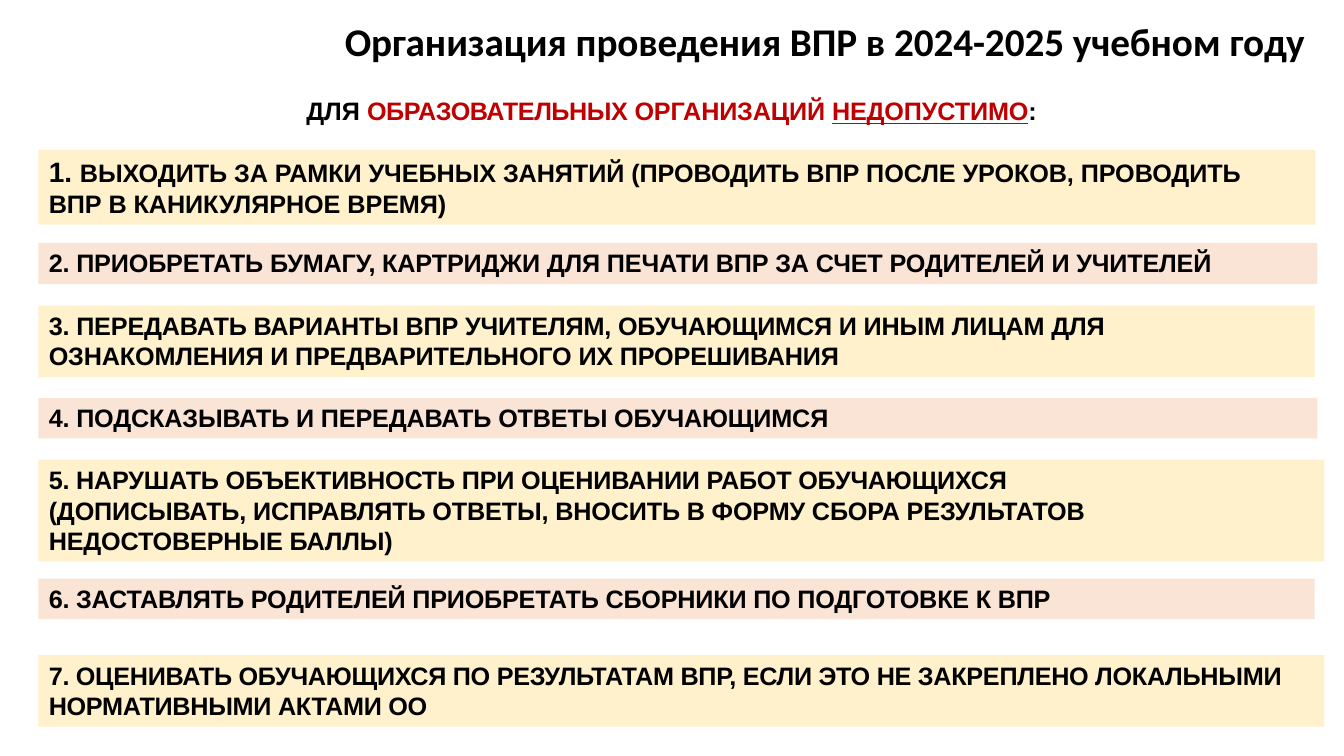
"""Build the slide listing what schools must not do during the VPR tests."""
from dataclasses import dataclass
from typing import Optional

from pptx import Presentation
from pptx.dml.color import RGBColor
from pptx.enum.shapes import MSO_SHAPE
from pptx.enum.text import MSO_ANCHOR, PP_ALIGN
from pptx.util import Cm, Pt

COLORS = {
    "black": "000000",
    "red": "C00000",
    "white": "FFFFFF",
    "cream": "FFF1CC",
    "peach": "FAE4D5",
}
BAR_LEFT = 0.97
BAR_FILLS = ("cream", "peach")


@dataclass(frozen=True)
class Span:
    text: str
    color: str = "black"
    size: float = 18
    font: str = "Arial"
    underline: bool = False
    spacing: float = -0.1


@dataclass(frozen=True)
class Line:
    spans: tuple[Span, ...]
    pitch: Optional[float] = None
    before: float = 0


@dataclass(frozen=True)
class Bar:
    top: float
    width: float
    height: float
    inset_top: float
    lines: tuple[Line, ...]
    inset_right: float = 0


def plain(text: str, pitch: Optional[float] = None, before: float = 0, spacing: float = -0.1) -> Line:
    return Line((Span(text, spacing=spacing),), pitch, before)


TITLE = Line((Span("Организация проведения ВПР в 2024-2025 учебном году",
                   size=28, font="Calibri", spacing=-0.05),))
HEADING = Line((
    Span("ДЛЯ ", spacing=0),
    Span("ОБРАЗОВАТЕЛЬНЫХ ", "red", spacing=-0.3),
    Span("ОРГАНИЗАЦИЙ ", "red"),
    Span("НЕДОПУСТИМО", "red", underline=True),
    Span(":"),
))
BARS = (
    Bar(3.78, 32.18, 1.88, 0.2, (
        Line((Span("1. ", size=20, spacing=0),
              Span("ВЫХОДИТЬ ЗА РАМКИ УЧЕБНЫХ ЗАНЯТИЙ (ПРОВОДИТЬ ВПР ПОСЛЕ УРОКОВ, "
                   "ПРОВОДИТЬ ВПР В КАНИКУЛЯРНОЕ ВРЕМЯ)", spacing=-0.05)), 21.6),), 0.8),
    Bar(6.12, 32.23, 1.04, 0.12, (
        plain("2. ПРИОБРЕТАТЬ БУМАГУ, КАРТРИДЖИ ДЛЯ ПЕЧАТИ ВПР ЗА СЧЕТ РОДИТЕЛЕЙ И УЧИТЕЛЕЙ"),)),
    Bar(7.7, 32.16, 1.8, 0.15, (
        plain("3. ПЕРЕДАВАТЬ ВАРИАНТЫ ВПР УЧИТЕЛЯМ, ОБУЧАЮЩИМСЯ И ИНЫМ ЛИЦАМ ДЛЯ "
              "ОЗНАКОМЛЕНИЯ И ПРЕДВАРИТЕЛЬНОГО ИХ ПРОРЕШИВАНИЯ", 21.1),)),
    Bar(10.03, 32.23, 1.02, 0.1, (
        plain("4. ПОДСКАЗЫВАТЬ И ПЕРЕДАВАТЬ ОТВЕТЫ ОБУЧАЮЩИМСЯ"),)),
    Bar(11.58, 32.41, 2.57, 0.12, (
        plain("5. НАРУШАТЬ ОБЪЕКТИВНОСТЬ ПРИ ОЦЕНИВАНИИ РАБОТ ОБУЧАЮЩИХСЯ", spacing=-0.15),
        plain("(ДОПИСЫВАТЬ, ИСПРАВЛЯТЬ ОТВЕТЫ, ВНОСИТЬ В ФОРМУ СБОРА РЕЗУЛЬТАТОВ "
              "НЕДОСТОВЕРНЫЕ БАЛЛЫ)", 21.1, 1.1)), 0.5),
    Bar(14.58, 32.16, 1.02, 0.12, (
        plain("6. ЗАСТАВЛЯТЬ РОДИТЕЛЕЙ ПРИОБРЕТАТЬ СБОРНИКИ ПО ПОДГОТОВКЕ К ВПР", spacing=-0.15),)),
    Bar(16.51, 32.41, 1.8, 0.15, (
        plain("7. ОЦЕНИВАТЬ ОБУЧАЮЩИХСЯ ПО РЕЗУЛЬТАТАМ ВПР, ЕСЛИ ЭТО НЕ ЗАКРЕПЛЕНО "
              "ЛОКАЛЬНЫМИ НОРМАТИВНЫМИ АКТАМИ ОО", 21.1, spacing=-0.2),)),
)


def write_text(box, lines: tuple[Line, ...], *, left: float, top: float, right: float = 0) -> None:
    frame = box.text_frame
    frame.word_wrap = True
    frame.vertical_anchor = MSO_ANCHOR.TOP
    frame.margin_left, frame.margin_top = Cm(left), Cm(top)
    frame.margin_right, frame.margin_bottom = Cm(right), Cm(0)
    for index, line in enumerate(lines):
        para = frame.add_paragraph() if index else frame.paragraphs[0]
        para.alignment = PP_ALIGN.LEFT
        if line.before:
            para.space_before = Pt(line.before)
        if line.pitch:
            para.line_spacing = Pt(line.pitch)
        for span in line.spans:
            run = para.add_run()
            run.text = span.text
            run.font.name = span.font
            run.font.size = Pt(span.size)
            run.font.bold = True
            run.font.underline = span.underline
            run.font.color.rgb = RGBColor.from_string(COLORS[span.color])
            run.font._element.set("spc", str(round(span.spacing * 100)))


def add_panel(page, left: float, top: float, width: float, height: float, fill: str):
    panel = page.shapes.add_shape(MSO_SHAPE.RECTANGLE, Cm(left), Cm(top), Cm(width), Cm(height))
    panel.shadow.inherit = False
    panel.fill.solid()
    panel.fill.fore_color.rgb = RGBColor.from_string(COLORS[fill])
    panel.line.fill.background()
    return panel


def main() -> None:
    deck = Presentation()
    deck.slide_width, deck.slide_height = Cm(33.87), Cm(19.05)
    page = deck.slides.add_slide(deck.slide_layouts[6])

    title = page.shapes.add_textbox(Cm(8.66), Cm(0.41), Cm(24.6), Cm(1.24))
    write_text(title, (TITLE,), left=0.03, top=0.03)

    heading = add_panel(page, 6.25, 2.31, 21.64, 1.02, "white")
    write_text(heading, (HEADING,), left=1.47, top=0.1)

    for index, bar in enumerate(BARS):
        panel = add_panel(page, BAR_LEFT, bar.top, bar.width, bar.height,
                          BAR_FILLS[index % len(BAR_FILLS)])
        write_text(panel, bar.lines, left=0.26, top=bar.inset_top, right=bar.inset_right)

    deck.save("out.pptx")


if __name__ == "__main__":
    main()
